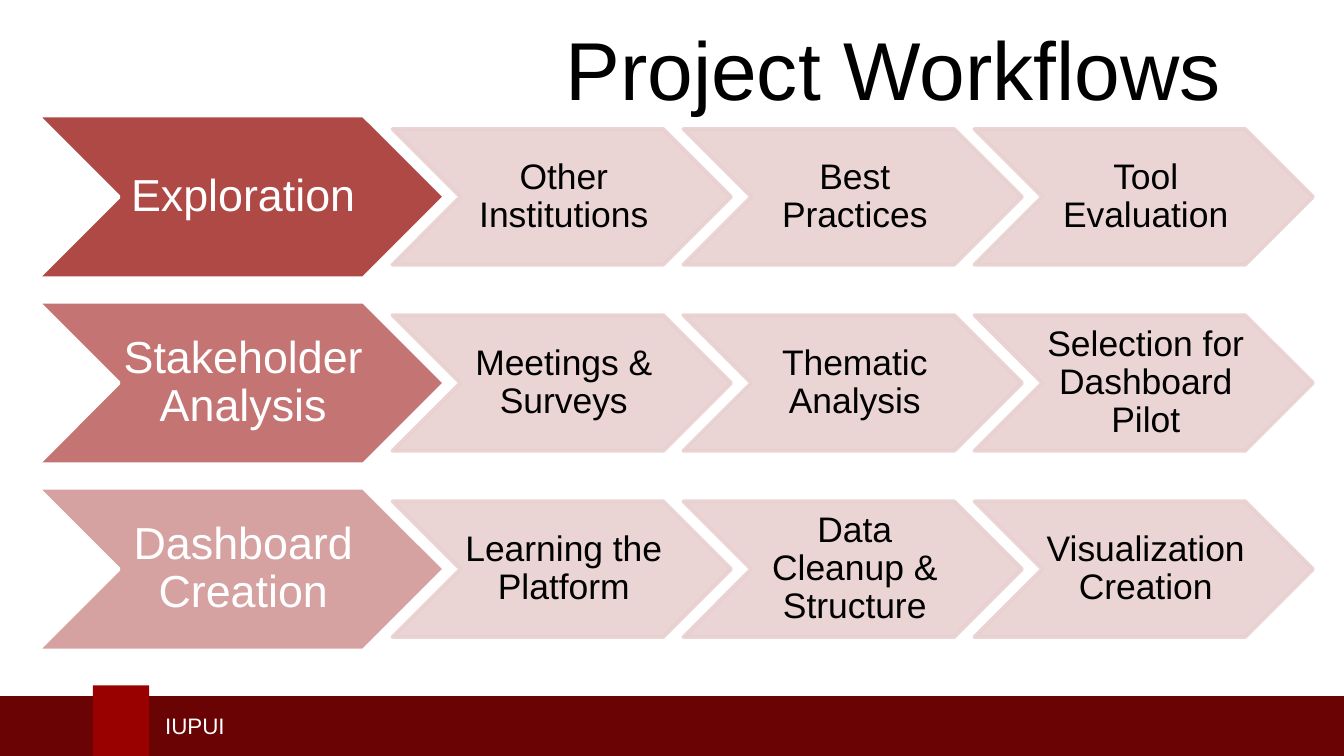
"""Build the Project Workflows slide: three chevron rows above a footer band."""
from lxml import etree
from pptx import Presentation
from pptx.dml.color import RGBColor
from pptx.enum.shapes import MSO_SHAPE
from pptx.enum.text import MSO_ANCHOR, MSO_AUTO_SIZE, PP_ALIGN
from pptx.oxml.ns import qn
from pptx.util import Inches, Pt

WHITE = RGBColor(0xFF, 0xFF, 0xFF)
BLACK = RGBColor(0x00, 0x00, 0x00)
MAROON = RGBColor(0x69, 0x03, 0x04)
CRIMSON = RGBColor(0x99, 0x00, 0x00)
PINK = RGBColor(0xE8, 0xD0, 0xD0)

ROWS = [
    (RGBColor(0xAE, 0x49, 0x46), "Exploration",
     ["Other Institutions", "Best Practices", "Tool Evaluation"]),
    (RGBColor(0xC4, 0x74, 0x72), "Stakeholder Analysis",
     ["Meetings & Surveys", "Thematic Analysis", "Selection for Dashboard Pilot"]),
    (RGBColor(0xD6, 0xA2, 0xA1), "Dashboard Creation",
     ["Learning the Platform", "Data Cleanup & Structure", "Visualization Creation"]),
]


def add_run(p, text, size, color):
    r = p.add_run()
    r.text = text
    r.font.name = "Arial"
    r.font.size = Pt(size)
    r.font.color.rgb = color


def add_chevron(x, y, w, h, fill, line, text, size, color, pad):
    sp = s.shapes.add_shape(MSO_SHAPE.CHEVRON, Inches(x), Inches(y), Inches(w), Inches(h))
    sp.shadow.inherit = False
    sp.fill.solid()
    sp.fill.fore_color.rgb = fill
    sp.line.color.rgb = line
    sp.line.width = Pt(2)
    tf = sp.text_frame
    tf.word_wrap = True
    tf.vertical_anchor = MSO_ANCHOR.MIDDLE
    tf.margin_left, tf.margin_right = Inches(0.03), 0
    tf.margin_top = tf.margin_bottom = Inches(pad)
    p = tf.paragraphs[0]
    p.alignment = PP_ALIGN.CENTER
    p.line_spacing = 0.9
    add_run(p, text, size, color)
    return sp


prs = Presentation()
prs.slide_width = Inches(10)
prs.slide_height = prs.slide_width * 9 // 16
s = prs.slides.add_slide(prs.slide_layouts[5])

title = s.shapes.title
title.left, title.top = Inches(3.68), Inches(0.09)
title.width, title.height = Inches(5.51), Inches(0.84)
tf = title.text_frame
tf.word_wrap = True
tf.auto_size = MSO_AUTO_SIZE.NONE
tf.vertical_anchor = MSO_ANCHOR.TOP
p = tf.paragraphs[0]
p.alignment = PP_ALIGN.RIGHT
add_run(p, "Project Workflows", 44, BLACK)

for x, y, w, h, color in [(-0.03, 5.18, 10.09, 0.5, MAROON), (0.69, 5.1, 0.42, 0.58, CRIMSON)]:
    sp = s.shapes.add_shape(MSO_SHAPE.RECTANGLE, Inches(x), Inches(y), Inches(w), Inches(h))
    sp.shadow.inherit = False
    sp.fill.solid()
    sp.fill.fore_color.rgb = color
    sp.line.fill.background()

footer = s.shapes.add_textbox(Inches(1.13), Inches(5.25), Inches(3.95), Inches(0.3))
tf = footer.text_frame
tf.word_wrap = True
tf.vertical_anchor = MSO_ANCHOR.MIDDLE
add_run(tf.paragraphs[0], "IUPUI", 12, WHITE)

for row, (color, phase, steps) in enumerate(ROWS):
    y = 0.86 + row * 2.77 / 2
    add_chevron(0.28, y, 3.03, 1.21, color, WHITE, phase, 24, WHITE, 0.02)
    for col, step in enumerate(steps):
        x = 2.92 + col * 4.33 / 2
        sp = add_chevron(x, y + 0.1, 2.52, 1.01, PINK, PINK, step, 19, BLACK, 0.01)
        for clr in sp._element.spPr.iter(qn("a:srgbClr")):
            etree.SubElement(clr, qn("a:alpha"), val="90000")

prs.save("out.pptx")
